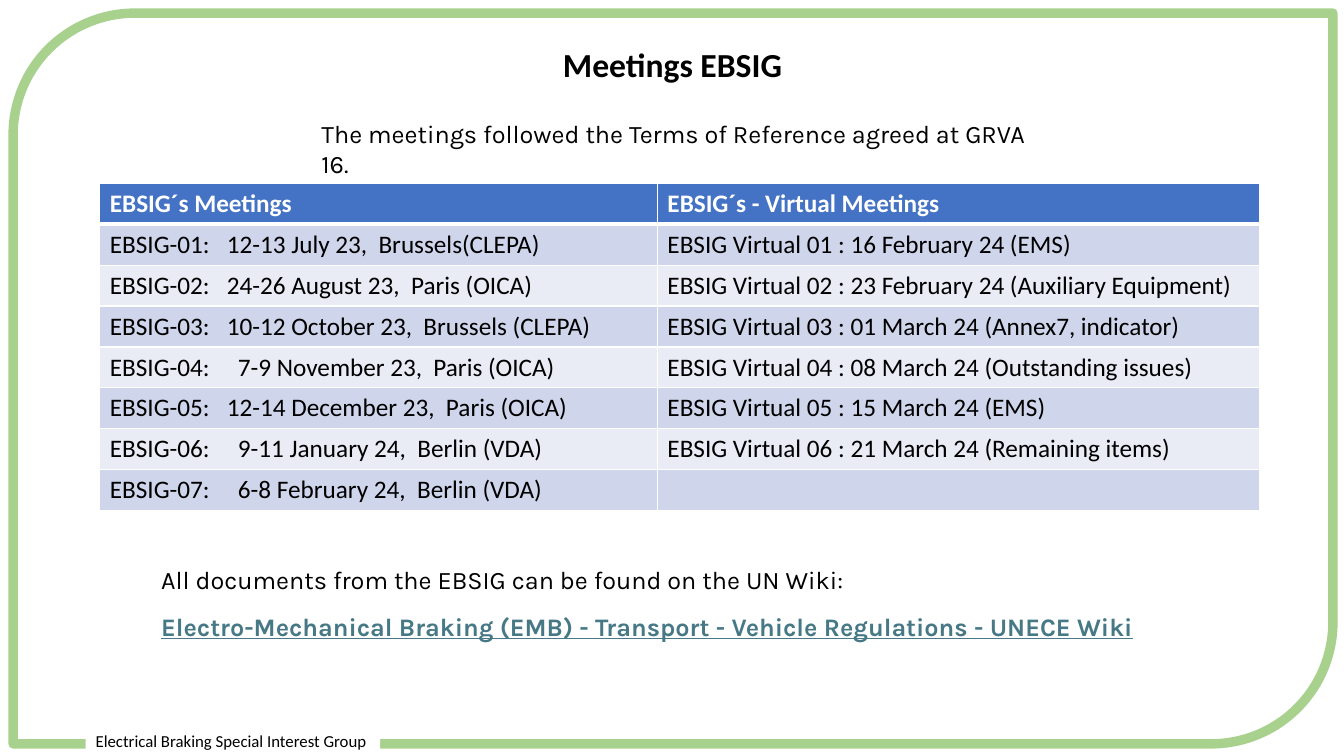
from dataclasses import dataclass

from lxml.etree import SubElement
from pptx import Presentation
from pptx.dml.color import RGBColor
from pptx.enum.shapes import MSO_SHAPE
from pptx.enum.text import MSO_ANCHOR, PP_ALIGN
from pptx.oxml.ns import qn
from pptx.slide import Slide
from pptx.table import _Cell
from pptx.text.text import TextFrame, _Paragraph
from pptx.util import Inches, Pt

BLACK, WHITE, GREEN, LINK = "000000", "FFFFFF", "A9D18E", "467886"
HEADER_FILL, BAND_FILLS = "4472C4", ("CFD5EA", "E9EBF5")


@dataclass
class Box:
    left: float
    top: float
    width: float
    height: float

    def lengths(self) -> list[int]:
        return [Inches(n) for n in (self.left, self.top, self.width, self.height)]


@dataclass
class Style:
    font: str = "Calibri"
    size: float = 18
    color: str = BLACK
    bold: bool = False
    underline: bool = False


@dataclass
class Meeting:
    days: str
    month: str
    place: str


@dataclass
class VirtualMeeting:
    date: str
    topic: str


MEETINGS = [
    Meeting("12-13", "July 23", "Brussels(CLEPA)"),
    Meeting("24-26", "August 23", "Paris (OICA)"),
    Meeting("10-12", "October 23", "Brussels (CLEPA)"),
    Meeting("7-9", "November 23", "Paris (OICA)"),
    Meeting("12-14", "December 23", "Paris (OICA)"),
    Meeting("9-11", "January 24", "Berlin (VDA)"),
    Meeting("6-8", "February 24", "Berlin (VDA)"),
]
VIRTUAL_MEETINGS = [
    VirtualMeeting("16 February 24", "EMS"),
    VirtualMeeting("23 February 24", "Auxiliary Equipment"),
    VirtualMeeting("01 March 24", "Annex7, indicator"),
    VirtualMeeting("08 March 24", "Outstanding issues"),
    VirtualMeeting("15 March 24", "EMS"),
    VirtualMeeting("21 March 24", "Remaining items"),
]


def rgb(color: str) -> RGBColor:
    return RGBColor.from_string(color)


def write(paragraph: _Paragraph, text: str, style: Style) -> None:
    paragraph.text = text
    for run in paragraph.runs:
        run.font.name = style.font
        run.font.size = Pt(style.size)
        run.font.bold = style.bold
        run.font.underline = style.underline
        run.font.color.rgb = rgb(style.color)


def add_text(slide: Slide, box: Box, lines: list[tuple[str, Style]]) -> TextFrame:
    text_frame = slide.shapes.add_textbox(*box.lengths()).text_frame
    text_frame.word_wrap = True
    text_frame.text = "\n".join(text for text, _ in lines)
    for paragraph, (text, style) in zip(text_frame.paragraphs, lines):
        write(paragraph, text, style)
    return text_frame


def add_frame(slide: Slide) -> None:
    frame = slide.shapes.add_shape(
        MSO_SHAPE.ROUND_2_DIAG_RECTANGLE, *Box(0.13, 0.13, 13.09, 7.25).lengths())
    frame.shadow.inherit = False
    frame.fill.background()
    frame.line.color.rgb = rgb(GREEN)
    frame.line.width = Pt(6.75)

    label = slide.shapes.add_shape(
        MSO_SHAPE.RECTANGLE, *Box(0.85, 7.2, 2.92, 0.3).lengths())
    label.shadow.inherit = False
    label.fill.solid()
    label.fill.fore_color.rgb = rgb(WHITE)
    label.line.fill.background()
    label.text_frame.word_wrap = False
    label.text_frame.vertical_anchor = MSO_ANCHOR.TOP
    paragraph = label.text_frame.paragraphs[0]
    write(paragraph, "Electrical Braking Special Interest Group", Style(size=12))
    paragraph.alignment = PP_ALIGN.LEFT


def set_borders(cell: _Cell, top: float, bottom: float) -> None:
    properties = cell._tc.get_or_add_tcPr()
    for side, points in (("L", 1), ("R", 1), ("T", top), ("B", bottom)):
        line = SubElement(properties, qn(f"a:ln{side}"), w=str(Pt(points)))
        SubElement(SubElement(line, qn("a:solidFill")), qn("a:srgbClr"), val=WHITE)


def set_tab(paragraph: _Paragraph, position: float) -> None:
    tabs = SubElement(paragraph._p.get_or_add_pPr(), qn("a:tabLst"))
    SubElement(tabs, qn("a:tab"), pos=str(Inches(position)), algn="l")


def add_meetings_table(slide: Slide) -> None:
    left_column = ["EBSIG´s Meetings"] + [
        f"EBSIG-{number:02}:\t{meeting.days} {meeting.month},  {meeting.place}"
        for number, meeting in enumerate(MEETINGS, 1)]
    right_column = ["EBSIG´s - Virtual Meetings"] + [
        f"EBSIG Virtual {number:02} : {meeting.date} ({meeting.topic})"
        for number, meeting in enumerate(VIRTUAL_MEETINGS, 1)]
    right_column += [""] * (len(left_column) - len(right_column))

    table = slide.shapes.add_table(
        len(left_column), 2, *Box(0.99, 1.82, 11.5, 3.24).lengths()).table
    for column, width in zip(table.columns, (5.53, 5.97)):
        column.width = Inches(width)

    for row, texts in enumerate(zip(left_column, right_column)):
        header = row == 0
        fill = HEADER_FILL if header else BAND_FILLS[(row - 1) % 2]
        style = Style(color=WHITE if header else BLACK, bold=header)
        for column, text in enumerate(texts):
            cell = table.cell(row, column)
            set_borders(cell, 3 if row == 1 else 1, 3 if header else 1)
            cell.fill.solid()
            cell.fill.fore_color.rgb = rgb(fill)
            write(cell.text_frame.paragraphs[0], text, style)

    # Dates line up, with one-digit days set in slightly
    for row, meeting in enumerate(MEETINGS, 1):
        one_digit = meeting.days.index("-") == 1
        set_tab(table.cell(row, 0).text_frame.paragraphs[0], 1.27 if one_digit else 1.16)


def main() -> None:
    presentation = Presentation()
    presentation.slide_width = Inches(13.33)
    presentation.slide_height = Inches(7.5)
    slide = presentation.slides.add_slide(presentation.slide_layouts[6])

    # Border and footer label
    add_frame(slide)

    # Meetings
    add_meetings_table(slide)

    # Title
    title = add_text(slide, Box(0.92, 0.25, 11.5, 0.83),
                     [("Meetings EBSIG", Style(size=24, bold=True))])
    title.vertical_anchor = MSO_ANCHOR.MIDDLE
    title.paragraphs[0].alignment = PP_ALIGN.CENTER
    title.paragraphs[0].line_spacing = 0.9

    # Where to find the documents
    body = Style(font="Karla")
    documents = add_text(slide, Box(1.5, 5.55, 10.08, 0.88), [
        ("All documents from the EBSIG can be found on the UN Wiki:", body),
        ("Electro-Mechanical Braking (EMB) - Transport - Vehicle Regulations - UNECE Wiki",
         Style(font="Karla", color=LINK, bold=True, underline=True)),
    ])
    documents.paragraphs[0].space_after = Pt(12)

    # Introduction
    add_text(slide, Box(3.09, 1.12, 7.3, 0.4), [
        ("The meetings followed the Terms of Reference agreed at GRVA 16.", body)])

    presentation.save("out.pptx")


if __name__ == "__main__":
    main()
